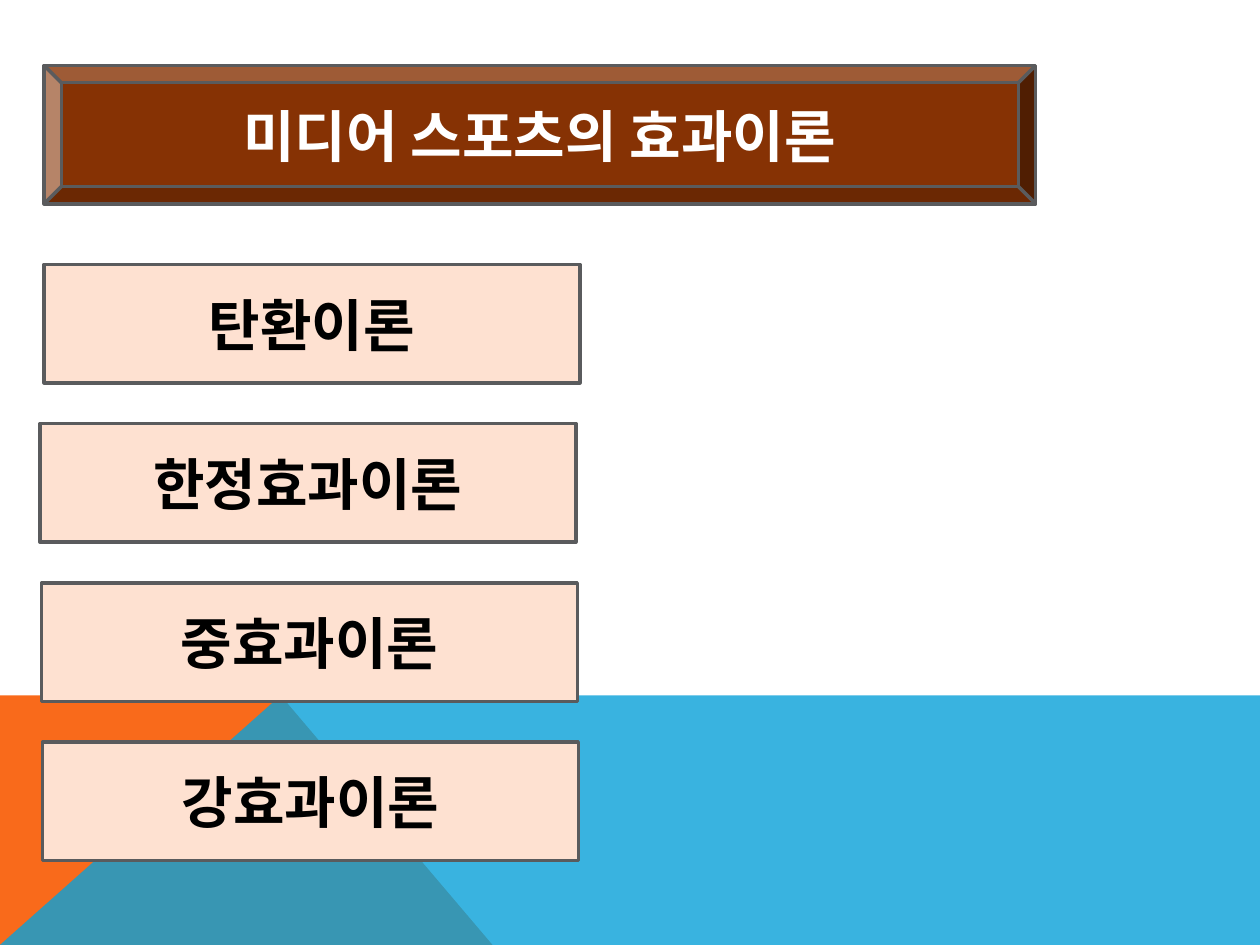
import pptx
import pptx.util
import pptx.dml.color
import pptx.enum.shapes
import pptx.enum.text
from lxml import etree

Cm = pptx.util.Cm
RGBColor = pptx.dml.color.RGBColor
MSO_SHAPE = pptx.enum.shapes.MSO_SHAPE

ORANGE = RGBColor(0xF9, 0x6A, 0x1B)
BLUE = RGBColor(0x08, 0xA1, 0xD9)
BROWN = RGBColor(0x86, 0x32, 0x04)
PEACH = RGBColor(0xFE, 0xE1, 0xD1)
GRAY = RGBColor(0x5A, 0x5B, 0x5D)
WHITE = RGBColor(0xFF, 0xFF, 0xFF)
BLACK = RGBColor(0x00, 0x00, 0x00)

TITLE = "미디어 스포츠의 효과이론"
THEORIES = [
    ("탄환이론", 0.89),
    ("한정효과이론", 0.81),
    ("중효과이론", 0.84),
    ("강효과이론", 0.86),
]
WIDTH, HEIGHT = 25.4, 19.05
BAND_TOP, PEAK = 14.02, 5.66
ORANGE_BAND = [(0, HEIGHT), (0, BAND_TOP), (PEAK, BAND_TOP), (9.93, HEIGHT)]
BLUE_BAND = [(0, HEIGHT), (PEAK, BAND_TOP), (WIDTH, BAND_TOP), (WIDTH, HEIGHT)]
FIRST_TOP, PITCH = 5.33, 3.21
BOX_W, BOX_H = 10.8, 2.39


def add_band(s, points, color, opacity=100):
    pts = [(Cm(x), Cm(y)) for x, y in points]
    fb = s.shapes.build_freeform(*pts[0])
    fb.add_line_segments(pts[1:], close=True)
    sp = fb.convert_to_shape()
    sp.shadow.inherit = False
    sp.fill.solid()
    sp.fill.fore_color.rgb = color
    sp.line.fill.background()
    if opacity < 100:
        clr = sp.fill._xPr.find(".//" + pptx.oxml.ns.qn("a:srgbClr"))
        etree.SubElement(clr, pptx.oxml.ns.qn("a:alpha"), val=str(opacity * 1000))


def add_box(s, kind, text, left, top, width, height, fill, color):
    sp = s.shapes.add_shape(kind, Cm(left), Cm(top), Cm(width), Cm(height))
    sp.shadow.inherit = False
    sp.fill.solid()
    sp.fill.fore_color.rgb = fill
    sp.line.color.rgb = GRAY
    sp.line.width = pptx.util.Pt(2)
    tf = sp.text_frame
    tf.word_wrap = True
    tf.vertical_anchor = pptx.enum.text.MSO_ANCHOR.MIDDLE
    p = tf.paragraphs[0]
    p.text = text
    p.alignment = pptx.enum.text.PP_ALIGN.CENTER
    p.font.name = "Karla"
    p.font.size = pptx.util.Pt(32)
    p.font.bold = True
    p.font.color.rgb = color


prs = pptx.Presentation()
prs.slide_width, prs.slide_height = Cm(WIDTH), Cm(HEIGHT)
s = prs.slides.add_slide(prs.slide_layouts[6])

add_band(s, ORANGE_BAND, ORANGE)
add_band(s, BLUE_BAND, BLUE, 80)
add_box(s, MSO_SHAPE.BEVEL, TITLE, 0.89, 1.32, 19.99, 2.79, BROWN, WHITE)
for i, (theory, left) in enumerate(THEORIES):
    add_box(s, MSO_SHAPE.RECTANGLE, theory, left, FIRST_TOP + i * PITCH,
            BOX_W, BOX_H, PEACH, BLACK)

prs.save("out.pptx")
